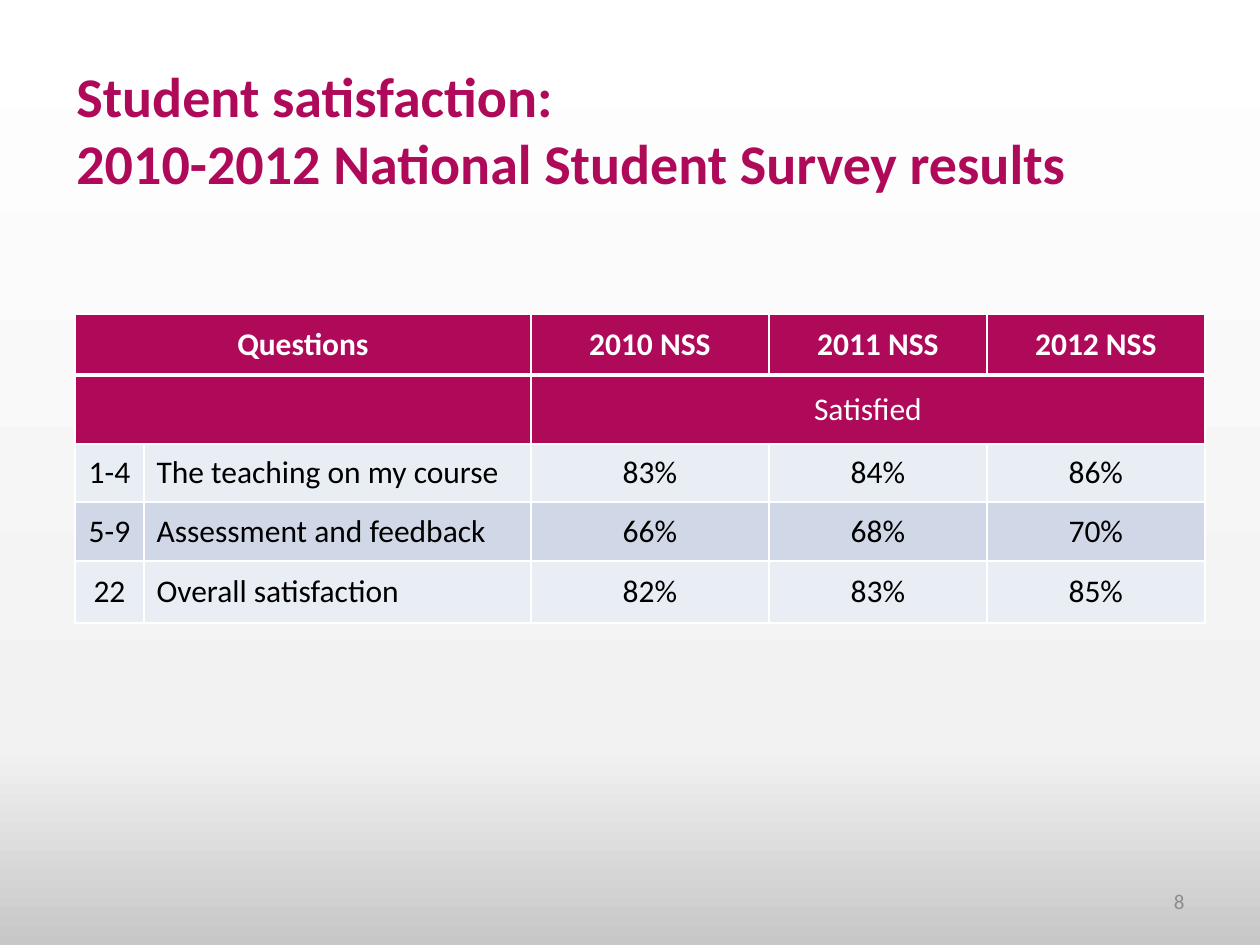
"""Build the slide on National Student Survey results."""
import copy

import lxml.etree
import pptx
import pptx.dml.color
import pptx.enum.text
import pptx.oxml.ns
import pptx.util

TITLE = ["Student satisfaction:", "2010-2012 National Student Survey results"]
HEADER = ["Questions", "", "2010 NSS", "2011 NSS", "2012 NSS"]
BANNER = ["", "", "Satisfied", "", ""]
RESULTS = [
    ["1-4", "The teaching on my course", "83%", "84%", "86%"],
    ["5-9", "Assessment and feedback", "66%", "68%", "70%"],
    ["22", "Overall satisfaction", "82%", "83%", "85%"],
]
PAGE_NUMBER = "8"

BACKDROP = [(0, "FFFFFF"), (0.79, "F2F2F2"), (1, "C7C7C7")]
BRAND, WHITE, BLACK, GREY = "AF0A5A", "FFFFFF", "000000", "8C8C8C"
BANDS = ["E9EDF4", "D0D8E8"]
FONT = "Calibri"

PAGE_SIZE = (1260, 945)
TITLE_BOX = (64, 55, 1181, 169)
NUMBER_BOX = (903, 876, 294, 50)
TABLE_LEFT, TABLE_TOP = 75, 314
COLUMNS = [69, 387, 238, 218, 218]
ROWS = [61, 69, 58, 59, 62]
MERGES = [((0, 0), (0, 1)), ((1, 0), (1, 1)), ((1, 2), (1, 4))]

ALIGN = pptx.enum.text.PP_ALIGN
ANCHOR = pptx.enum.text.MSO_ANCHOR


def px(count):
    return pptx.util.Emu(round(count * 914400 / 126))


def colour(code):
    return pptx.dml.color.RGBColor.from_string(code)


def style(font, size, code, bold=False):
    font.name = FONT
    font.size = pptx.util.Pt(size)
    font.bold = bold
    font.color.rgb = colour(code)


def add_text(page, place, lines, size, code, bold, align, anchor):
    frame = page.shapes.add_textbox(*map(px, place)).text_frame
    frame.word_wrap = True
    frame.vertical_anchor = anchor
    para = frame.paragraphs[0]
    para.alignment = align
    for index, line in enumerate(lines):
        if index:
            para.add_line_break()
        span = para.add_run()
        span.text = line
        style(span.font, size, code, bold)
    style(para.font, size, code, bold)


def paint_backdrop(page):
    fill = page.background.fill
    fill.gradient()
    fill.gradient_angle = 270
    stops = page.element.find(".//" + pptx.oxml.ns.qn("a:gsLst"))
    stops.append(copy.deepcopy(stops[-1]))
    for stop, (position, code) in zip(fill.gradient_stops, BACKDROP):
        stop.position = position
        stop.color.rgb = colour(code)


def add_borders(cell, widths):
    qn = pptx.oxml.ns.qn
    properties = cell._tc.get_or_add_tcPr()
    for side, width in zip("LRTB", widths):
        line = lxml.etree.SubElement(properties, qn("a:ln" + side), w=str(pptx.util.Pt(width)))
        solid = lxml.etree.SubElement(line, qn("a:solidFill"))
        lxml.etree.SubElement(solid, qn("a:srgbClr"), val=WHITE)


def fill_cell(cell, text, row, column):
    heading = row < 2
    add_borders(cell, (1, 1, 3 if row == 1 else 1, 3 if row == 0 else 1))
    cell.fill.solid()
    cell.fill.fore_color.rgb = colour(BRAND if heading else BANDS[row % 2])
    cell.vertical_anchor = ANCHOR.MIDDLE
    para = cell.text_frame.paragraphs[0]
    para.alignment = ALIGN.LEFT if column == 1 and not heading else ALIGN.CENTER
    look = (18, WHITE if heading else BLACK, row == 0)
    style(para.font, *look)
    if text:
        span = para.add_run()
        span.text = text
        style(span.font, *look)


def add_results(page):
    contents = [HEADER, BANNER, *RESULTS]
    place = (TABLE_LEFT, TABLE_TOP, sum(COLUMNS), sum(ROWS))
    table = page.shapes.add_table(len(ROWS), len(COLUMNS), *map(px, place)).table
    for column, width in zip(table.columns, COLUMNS):
        column.width = px(width)
    for row, height in zip(table.rows, ROWS):
        row.height = px(height)
    for first, last in MERGES:
        table.cell(*first).merge(table.cell(*last))
    for row, texts in enumerate(contents):
        for column, text in enumerate(texts):
            fill_cell(table.cell(row, column), text, row, column)


def main():
    deck = pptx.Presentation()
    deck.slide_width, deck.slide_height = map(px, PAGE_SIZE)
    page = deck.slides.add_slide(deck.slide_layouts[6])
    paint_backdrop(page)
    add_text(page, TITLE_BOX, TITLE, 32, BRAND, True, ALIGN.LEFT, ANCHOR.TOP)
    add_results(page)
    add_text(page, NUMBER_BOX, [PAGE_NUMBER], 12, GREY, False, ALIGN.RIGHT, ANCHOR.MIDDLE)
    deck.save("out.pptx")


if __name__ == "__main__":
    main()
